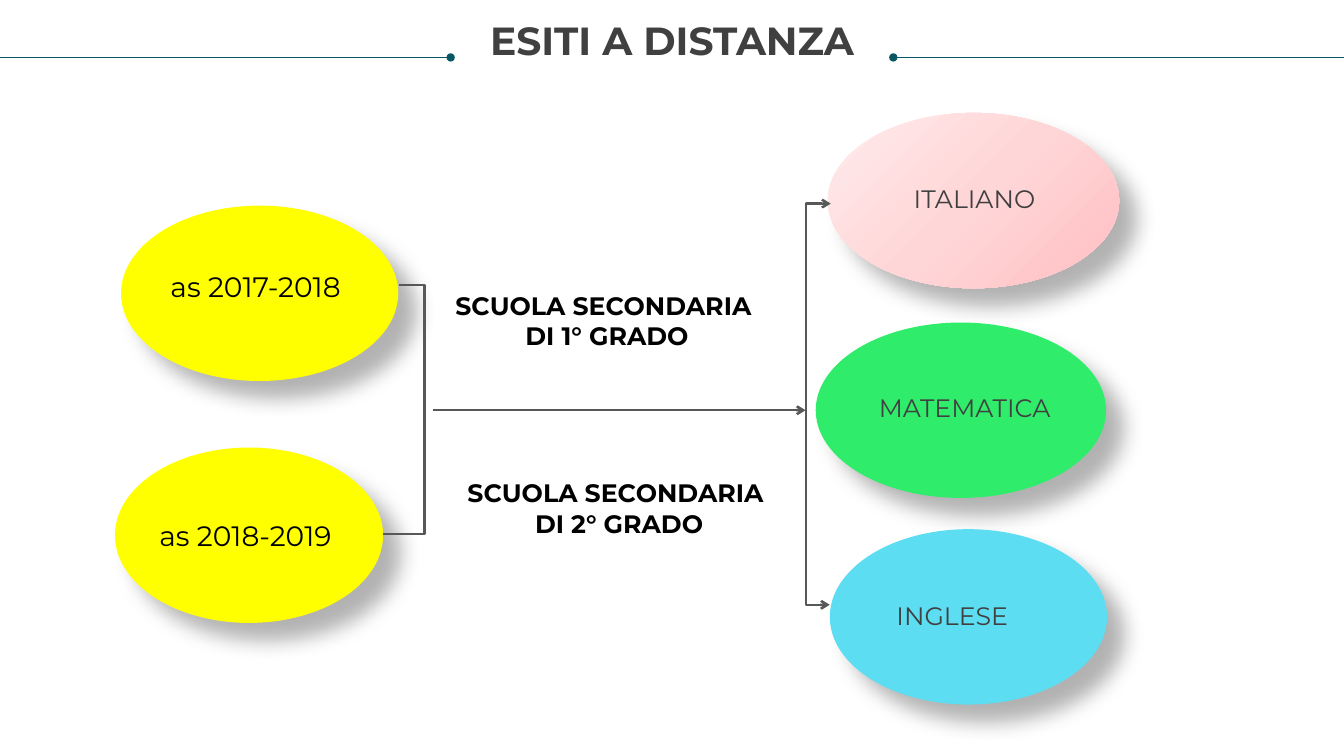
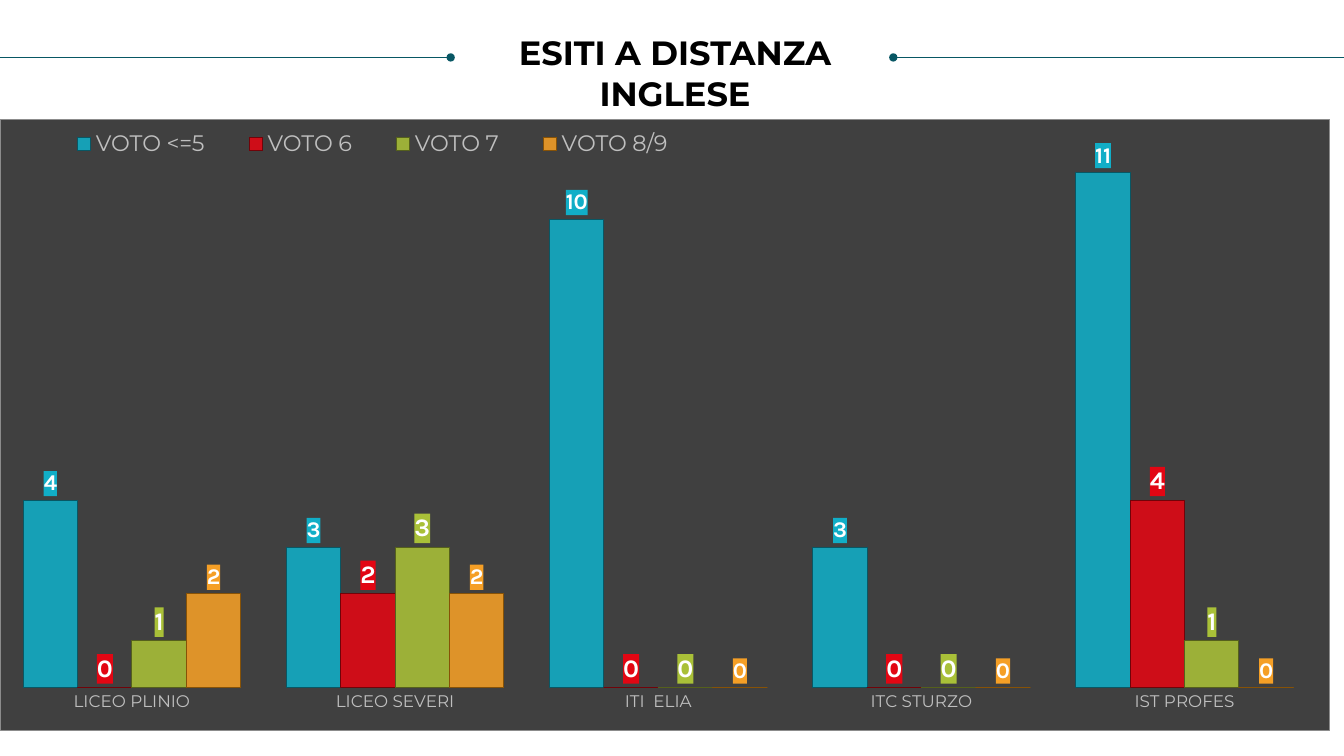
from lxml import etree
from pptx import Presentation
from pptx.chart.data import CategoryChartData
from pptx.dml.color import RGBColor
from pptx.enum import chart as ch, shapes, text
from pptx.oxml import parse_xml
from pptx.oxml.ns import nsdecls, qn
from pptx.util import Inches, Pt

FONT = "Montserrat"
CHART_FONT = "Karla"
BLACK = RGBColor(0x00, 0x00, 0x00)
WHITE = RGBColor(0xFF, 0xFF, 0xFF)
CHARCOAL = RGBColor(0x40, 0x40, 0x40)
ARROW_GREY = RGBColor(0x58, 0x58, 0x58)
BORDER_GREY = RGBColor(0x8C, 0x8C, 0x8C)
LIGHT_GREY = RGBColor(0xBF, 0xBF, 0xBF)
TEAL = RGBColor(0x08, 0x57, 0x64)
YELLOW = RGBColor(0xFF, 0xFF, 0x00)
GREEN = RGBColor(0x2F, 0xED, 0x6A)
SKY = RGBColor(0x5C, 0xDD, 0xF1)
PINKS = [RGBColor(0xFF, 0xBF, 0xC2), RGBColor(0xFF, 0xD6, 0xD8), RGBColor(0xFF, 0xEB, 0xEB)]

SCHOOLS = ["LICEO PLINIO", "LICEO SEVERI", "ITI  ELIA", "ITC STURZO", "IST PROFES"]
GRADES = [
    ("VOTO <=5", [4, 3, 10, 3, 11], RGBColor(0x11, 0xAE, 0xC7), TEAL, 16),
    ("VOTO 6", [0, 2, 0, 0, 4], RGBColor(0xE2, 0x06, 0x13), RGBColor(0x71, 0x03, 0x09), 18),
    ("VOTO 7", [1, 3, 0, 0, 1], RGBColor(0xA9, 0xC0, 0x38), RGBColor(0x55, 0x60, 0x1C), 18),
    ("VOTO 8/9", [2, 2, 0, 0, 0], RGBColor(0xF5, 0x9F, 0x26), RGBColor(0x87, 0x52, 0x06), 16),
]


def style_font(font, size, color, bold=False, name=FONT):
    font.name, font.size, font.bold = name, Pt(size), bold
    font.color.rgb = color


def write(shape, words, size, color, bold=False, spacing=None, inset=True, middle=False):
    frame = shape.text_frame
    frame.text = words
    frame.word_wrap = True
    frame.auto_size = text.MSO_AUTO_SIZE.NONE
    frame.vertical_anchor = text.MSO_ANCHOR.MIDDLE if middle else text.MSO_ANCHOR.TOP
    if not inset:
        frame.margin_left = frame.margin_right = frame.margin_top = frame.margin_bottom = 0
    for paragraph in frame.paragraphs:
        paragraph.alignment = text.PP_ALIGN.CENTER
        paragraph.line_spacing = spacing
        for run in paragraph.runs:
            style_font(run.font, size, color, bold)


def add_text(slide, box, words, size, color, **options):
    write(slide.shapes.add_textbox(*map(Inches, box)), words, size, color, **options)


def add_line(slide, start, end, color, width, head=None, tail=None, bend_x=None):
    kind = shapes.MSO_CONNECTOR.STRAIGHT if bend_x is None else shapes.MSO_CONNECTOR.ELBOW
    line = slide.shapes.add_connector(kind, *map(Inches, (*start, *end)))
    line.line.color.rgb = color
    line.line.width = Pt(width)
    properties = line._element.spPr
    outline = properties.find(qn("a:ln"))
    for tag, ending in (("a:headEnd", head), ("a:tailEnd", tail)):
        if ending:
            etree.SubElement(outline, qn(tag), type=ending)
    etree.SubElement(properties, qn("a:effectLst"))
    if bend_x is not None:
        ratio = round((bend_x - start[0]) / (end[0] - start[0]) * 100000)
        guides = properties.find(qn("a:prstGeom")).get_or_add_avLst()
        etree.SubElement(guides, qn("a:gd"), name="adj1", fmla=f"val {ratio}")


def add_heading(slide, box, words, size, color, **options):
    for start, end, head, tail in (((0, 0.57), (4.47, 0.57), None, "oval"),
                                   ((8.86, 0.57), (13.33, 0.57), "oval", None)):
        add_line(slide, start, end, TEAL, 0.5, head, tail)
    title = slide.shapes.title
    title.left, title.top, title.width, title.height = map(Inches, box)
    write(title, words, size, color, bold=True, **options)


def add_bubble(slide, box, fill):
    bubble = slide.shapes.add_shape(shapes.MSO_SHAPE.OVAL, *map(Inches, box))
    bubble.line.fill.background()
    properties = bubble._element.spPr
    if isinstance(fill, list):
        stops = "".join(f'<a:gs pos="{i * 50000}"><a:srgbClr val="{color}"/></a:gs>'
                        for i, color in enumerate(fill))
        properties.find(qn("a:prstGeom")).addnext(parse_xml(
            f'<a:gradFill {nsdecls("a")}><a:gsLst>{stops}</a:gsLst><a:path path="circle">'
            '<a:fillToRect l="100000" t="100000"/></a:path></a:gradFill>'))
    else:
        bubble.fill.solid()
        bubble.fill.fore_color.rgb = fill
    properties.append(parse_xml(
        f'<a:effectLst {nsdecls("a")}><a:outerShdw blurRad="{Pt(15)}" dist="{Pt(18)}" '
        'dir="2700000" algn="tl" rotWithShape="0"><a:srgbClr val="000000">'
        '<a:alpha val="30000"/></a:srgbClr></a:outerShdw></a:effectLst>'))


def add_years(slide, left, top):
    years = [("as 2017-2018", 0.06, 0, 2.75, 0.32, 0.63, 2.15),
             ("as 2018-2019", 0, 2.4, 2.66, 0.26, 3.1, 2.07)]
    for _, x, y, width, *_ in years:
        add_bubble(slide, (left + x, top + y, width, 1.74), YELLOW)
    for year, _, _, _, x, y, width in years:
        add_text(slide, (left + x, top + y, width, 0.34), year, 20, BLACK,
                 inset=False, middle=True)
    add_line(slide, (left + 2.82, top + 0.79), (left + 2.66, top + 3.26),
             ARROW_GREY, 1.75, bend_x=left + 3.07)


def add_schools(slide, left, top):
    for grade, x, y in (("1°", 0, 0), ("2°", 0.12, 1.86)):
        add_text(slide, (left + x, top + y, 3.64, 0.71),
                 f"SCUOLA SECONDARIA \nDI {grade} GRADO", 18, BLACK, bold=True)
    add_line(slide, (left + 0.09, top + 1.24), (left + 3.79, top + 1.24),
             ARROW_GREY, 1.75, tail="arrow")


def add_subjects(slide, left, top):
    subjects = [("ITALIANO", PINKS, 0.22, 0, 2.89, 0.94, 0.73, 1.47),
                ("MATEMATICA ", GREEN, 0.1, 2.08, 2.88, 0.67, 2.81, 1.88),
                ("INGLESE", SKY, 0.24, 4.13, 2.75, 0.72, 4.87, 1.47)]
    for _, fill, x, y, width, *_ in subjects:
        add_bubble(slide, (left + x, top + y, width, 1.74), fill)
    for subject, _, _, _, _, x, y, width in subjects:
        add_text(slide, (left + x, top + y, width, 0.27), subject, 18, CHARCOAL,
                 spacing=Pt(19), inset=False, middle=True)
    add_line(slide, (left + 0.25, top + 0.9), (left + 0.24, top + 4.88),
             ARROW_GREY, 1.75, "arrow", "arrow", bend_x=left)


def place_in_chart(part, index, x, y, width, height, inner=False):
    for old in part.findall(qn("c:layout")):
        part.remove(old)
    target = '<c:layoutTarget val="inner"/>' if inner else ""
    part.insert(index, parse_xml(
        f'<c:layout {nsdecls("c")}><c:manualLayout>{target}<c:xMode val="edge"/>'
        f'<c:yMode val="edge"/><c:x val="{x}"/><c:y val="{y}"/><c:w val="{width}"/>'
        f'<c:h val="{height}"/></c:manualLayout></c:layout>'))


def chart_fill(color, border=None):
    outline = (f'<a:ln w="{Pt(0.5)}"><a:solidFill><a:srgbClr val="{border}"/></a:solidFill></a:ln>'
               if border else "")
    return parse_xml(f'<c:spPr {nsdecls("c", "a")}><a:solidFill><a:srgbClr val="{color}"/>'
                     f'</a:solidFill>{outline}</c:spPr>')


def style_series(series, color, outline, label_size):
    series.format.fill.solid()
    series.format.fill.fore_color.rgb = color
    swatch = series._element.find("/".join(map(qn, ("c:spPr", "a:solidFill", "a:srgbClr"))))
    etree.SubElement(swatch, qn("a:alpha"), val="88000")
    series.format.line.color.rgb = outline
    series.format.line.width = Pt(0.75)
    labels = series.data_labels
    labels.show_value = True
    labels.position = ch.XL_LABEL_POSITION.OUTSIDE_END
    style_font(labels.font, label_size, WHITE, True, CHART_FONT)
    labels._element.find(qn("c:txPr")).addprevious(chart_fill(color))


def add_grades_chart(slide, box):
    data = CategoryChartData()
    data.categories = SCHOOLS
    for name, values, *_ in GRADES:
        data.add_series(name, values)
    chart = slide.shapes.add_chart(
        ch.XL_CHART_TYPE.COLUMN_CLUSTERED, *map(Inches, box), data).chart
    chart.has_title = False
    style_font(chart.font, 10, BLACK, name=CHART_FONT)
    space = chart.element
    space.find(qn("c:chart")).addnext(chart_fill(CHARCOAL, BORDER_GREY))

    plot = chart.plots[0]
    plot.gap_width, plot.overlap, plot.vary_by_categories = 84, 0, False
    for series, (_, _, *look) in zip(plot.series, GRADES):
        style_series(series, *look)

    values = chart.value_axis
    values.minimum_scale, values.maximum_scale = 0, 12
    values.has_major_gridlines = values.visible = False
    schools = chart.category_axis
    schools.major_tick_mark = schools.minor_tick_mark = ch.XL_TICK_MARK.NONE
    schools.format.line.fill.background()
    style_font(schools.tick_labels.font, 12, LIGHT_GREY)

    chart.has_legend = True
    legend = chart.legend
    legend.position = ch.XL_LEGEND_POSITION.TOP
    legend.include_in_layout = False
    style_font(legend.font, 16, LIGHT_GREY)
    place_in_chart(legend._element, 1, 0.03, 0.01, 0.5, 0.06)
    place_in_chart(space.find("/".join(map(qn, ("c:chart", "c:plotArea")))), 0,
                   0, 0.01, 0.99, 0.92, inner=True)


def outline_slide(slide):
    add_heading(slide, (0.25, 0.21, 12.83, 0.5), "ESITI A DISTANZA", 28, CHARCOAL,
                spacing=0.9, inset=False)
    add_years(slide, 1.14, 2.04)
    add_schools(slide, 4.2, 2.83)
    add_subjects(slide, 7.99, 1.12)


def english_slide(slide):
    add_heading(slide, (4.88, 0.27, 3.63, 0.91), "ESITI A DISTANZA\nINGLESE", 24, BLACK,
                spacing=1.0)
    add_grades_chart(slide, (0, 1.18, 13.19, 6.07))


def main():
    deck = Presentation()
    deck.slide_width, deck.slide_height = Inches(13.33), Inches(7.5)
    for build in (outline_slide, english_slide):
        build(deck.slides.add_slide(deck.slide_layouts[5]))
    deck.save("out.pptx")


if __name__ == "__main__":
    main()
